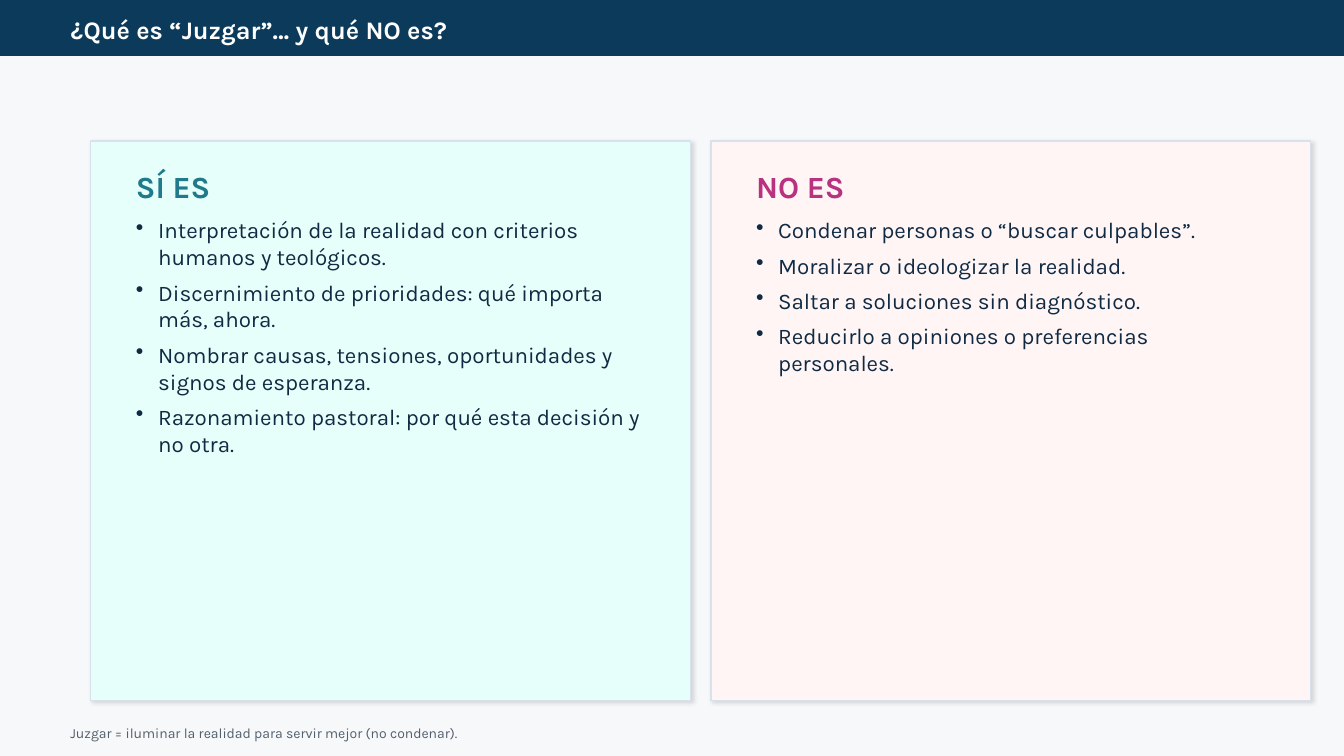
from dataclasses import dataclass

from lxml import etree
from pptx import Presentation
from pptx.dml.color import RGBColor
from pptx.enum.shapes import MSO_SHAPE
from pptx.enum.text import MSO_ANCHOR, MSO_AUTO_SIZE, PP_ALIGN
from pptx.oxml.ns import qn
from pptx.util import Emu, Pt

RECTANGLE = MSO_SHAPE.RECTANGLE
TOP, MIDDLE = MSO_ANCHOR.TOP, MSO_ANCHOR.MIDDLE
LEFT = PP_ALIGN.LEFT
NO_AUTOFIT = MSO_AUTO_SIZE.NONE
TITLE_ONLY = 5
EMU_PER_PX = 9144  # 100 px to the inch


@dataclass(frozen=True)
class Theme:
    font: str = "Karla"
    background: str = "F7F8FA"
    navy: str = "0B3A5B"
    white: str = "FFFFFF"
    ink: str = "102A43"
    muted: str = "52606D"
    border: str = "D9E2EC"
    yes_fill: str = "E6FFFA"
    yes_heading: str = "1F7A8C"
    no_fill: str = "FFF5F5"
    no_heading: str = "B83280"
    title_size: int = 18
    heading_size: int = 22
    body_size: int = 16
    note_size: int = 10


THEME = Theme()

CARDS = [
    ("SÍ ES", THEME.yes_fill, THEME.yes_heading, [
        "Interpretación de la realidad con criterios humanos y teológicos.",
        "Discernimiento de prioridades: qué importa más, ahora.",
        "Nombrar causas, tensiones, oportunidades y signos de esperanza.",
        "Razonamiento pastoral: por qué esta decisión y no otra.",
    ]),
    ("NO ES", THEME.no_fill, THEME.no_heading, [
        "Condenar personas o “buscar culpables”.",
        "Moralizar o ideologizar la realidad.",
        "Saltar a soluciones sin diagnóstico.",
        "Reducirlo a opiniones o preferencias personales.",
    ]),
]
CARD_LEFT, CARD_TOP, CARD_WIDTH, CARD_HEIGHT, CARD_GAP = 90, 140, 595, 555, 20
CARD_PADDING = 35


def px(length):
    return Emu(length * EMU_PER_PX)


def add_run(paragraph, text, size, color, bold=False):
    run = paragraph.add_run()
    run.text = text
    run.font.name = THEME.font
    run.font.size = Pt(size)
    run.font.bold = bold
    run.font.color.rgb = RGBColor.from_string(color)


def prepare_frame(shape, anchor):
    frame = shape.text_frame
    frame.word_wrap = True
    frame.auto_size = NO_AUTOFIT
    frame.vertical_anchor = anchor
    return frame


def add_text(slide, box, anchor=MIDDLE):
    return prepare_frame(slide.shapes.add_textbox(*map(px, box)), anchor)


def add_rectangle(slide, box, fill, line):
    shape = slide.shapes.add_shape(RECTANGLE, *map(px, box))
    shape.shadow.inherit = False
    shape.fill.solid()
    shape.fill.fore_color.rgb = RGBColor.from_string(fill)
    shape.line.color.rgb = RGBColor.from_string(line)
    shape.line.width = Pt(1)
    return shape


def add_soft_shadow(shape):
    effects = shape._element.spPr.find(qn("a:effectLst"))
    shadow = etree.SubElement(
        effects, qn("a:outerShdw"), blurRad=str(Pt(3)), dist=str(Pt(1.5)),
        dir=str(45 * 60000), algn="bl", rotWithShape="0")
    color = etree.SubElement(shadow, qn("a:srgbClr"), val="000000")
    etree.SubElement(color, qn("a:alpha"), val="12000")


def add_bullets(frame, items):
    for index, item in enumerate(items):
        paragraph = frame.add_paragraph() if index else frame.paragraphs[0]
        properties = paragraph._p.get_or_add_pPr()
        properties.set("marL", str(px(22)))
        properties.set("indent", str(-px(22)))
        etree.SubElement(properties, qn("a:buChar"), char="•")
        paragraph.space_after = Pt(6)
        add_run(paragraph, item, THEME.body_size, THEME.ink)


def add_title_band(slide, text):
    band = add_rectangle(slide, (0, 0, 1333, 55), THEME.navy, THEME.navy)
    title = slide.shapes.title
    title._element.addprevious(band._element)  # keep the title in front
    title.left, title.top, title.width, title.height = map(px, (60, 12, 1220, 35))
    paragraph = prepare_frame(title, MIDDLE).paragraphs[0]
    paragraph.alignment = LEFT
    add_run(paragraph, text, THEME.title_size, THEME.white, bold=True)


def add_card(slide, left, heading, fill, heading_color, items):
    box = (left, CARD_TOP, CARD_WIDTH, CARD_HEIGHT)
    add_soft_shadow(add_rectangle(slide, box, fill, THEME.border))
    text_left, text_width = left + CARD_PADDING, CARD_WIDTH - 2 * CARD_PADDING
    frame = add_text(slide, (text_left, CARD_TOP + 25, text_width, 40))
    add_run(frame.paragraphs[0], heading, THEME.heading_size, heading_color, bold=True)
    add_bullets(add_text(slide, (text_left, CARD_TOP + 70, text_width, 460), TOP), items)


def main():
    presentation = Presentation()
    presentation.slide_width, presentation.slide_height = px(1333), px(750)
    slide = presentation.slides.add_slide(presentation.slide_layouts[TITLE_ONLY])
    slide.background.fill.solid()
    slide.background.fill.fore_color.rgb = RGBColor.from_string(THEME.background)

    # Header
    add_title_band(slide, "¿Qué es “Juzgar”… y qué NO es?")

    # Two contrasting cards
    for index, card in enumerate(CARDS):
        add_card(slide, CARD_LEFT + index * (CARD_WIDTH + CARD_GAP), *card)

    # Closing note
    note = add_text(slide, (60, 715, 1220, 25))
    add_run(note.paragraphs[0],
            "Juzgar = iluminar la realidad para servir mejor (no condenar).",
            THEME.note_size, THEME.muted)

    presentation.save("out.pptx")


if __name__ == "__main__":
    main()
